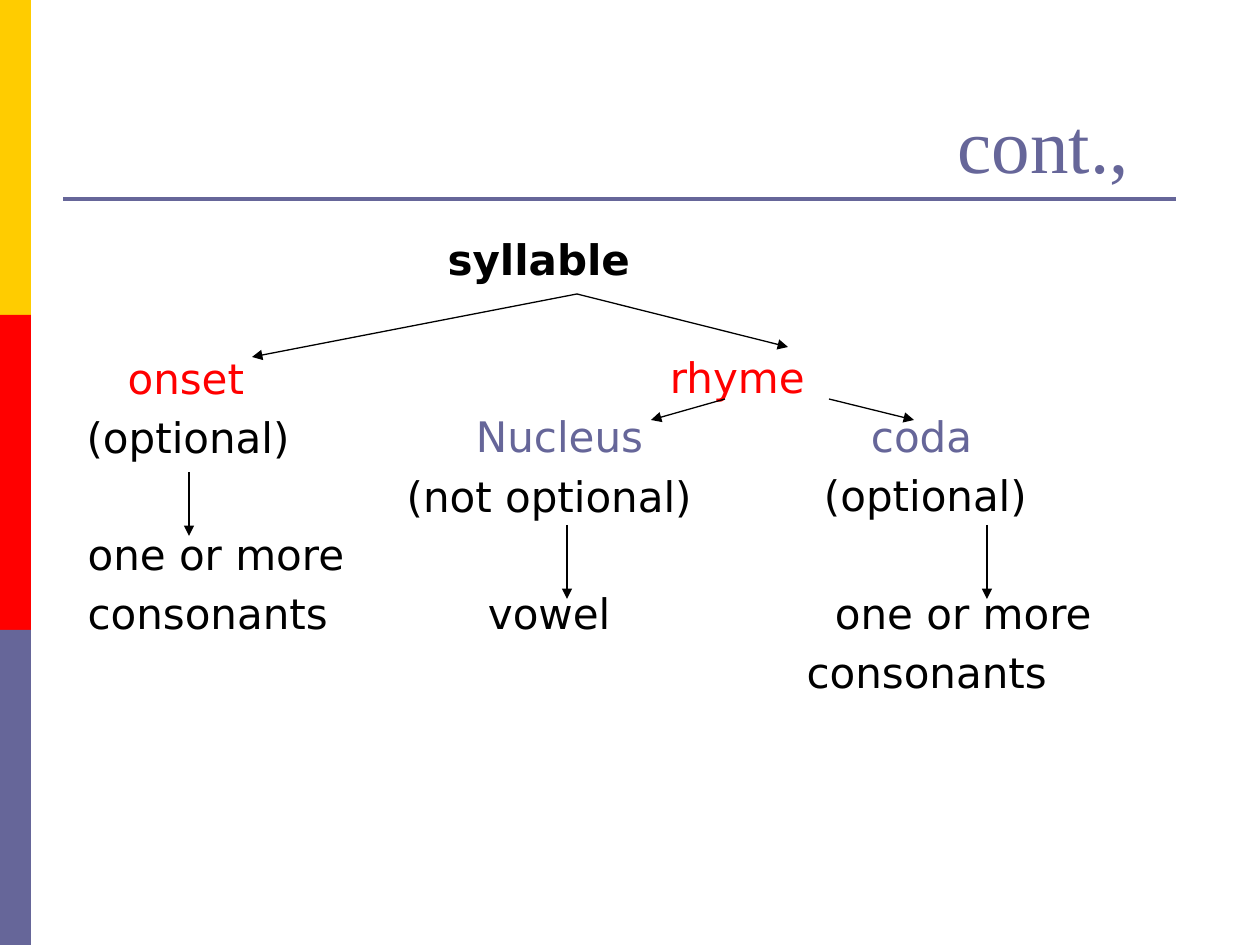
from pptx import Presentation
from pptx.dml.color import RGBColor
from pptx.enum.shapes import MSO_CONNECTOR, MSO_SHAPE
from pptx.enum.text import MSO_ANCHOR, MSO_AUTO_SIZE, PP_ALIGN
from pptx.oxml.ns import qn
from pptx.util import Pt
from lxml import etree

LINE = MSO_CONNECTOR.STRAIGHT
RECT = MSO_SHAPE.RECTANGLE
RIGHT = PP_ALIGN.RIGHT
BOTTOM, TOP = MSO_ANCHOR.BOTTOM, MSO_ANCHOR.TOP
FIXED = MSO_AUTO_SIZE.NONE

THEME = {
    "gold": RGBColor(0xFF, 0xCC, 0x00),
    "red": RGBColor(0xFF, 0x00, 0x00),
    "slate": RGBColor(0x66, 0x66, 0x99),
    "black": RGBColor(0x00, 0x00, 0x00),
    "head": ("Times New Roman", Pt(44)),
    "text": ("DejaVu Sans", Pt(24)),
}


def px(n):
    return round(n * 914400 / 126)


def draw_line(slide, ends, tone, width):
    line = slide.shapes.add_connector(LINE, *[px(n) for n in ends])
    line.line.color.rgb = THEME[tone]
    line.line.width = Pt(width)
    etree.SubElement(line._element.spPr, qn("a:effectLst"))
    return line


deck = Presentation()
deck.slide_width, deck.slide_height = px(1260), px(945)
slide = deck.slides.add_slide(deck.slide_layouts[1])

# Side bars and title rule
for i, tone in enumerate(("gold", "red", "slate")):
    bar = slide.shapes.add_shape(RECT, 0, px(315 * i), px(31), px(315))
    bar.shadow.inherit = False
    bar.fill.solid()
    bar.fill.fore_color.rgb = THEME[tone]
    bar.line.fill.background()
draw_line(slide, (63, 199, 1176, 199), "slate", 1.75)

# Title
title = slide.shapes.title
title.left, title.top, title.width, title.height = px(63), px(38), px(1134), px(157)
frame = title.text_frame
frame.text = "cont.,"
frame.auto_size = FIXED
frame.vertical_anchor = BOTTOM
frame.margin_right = px(68)
frame.margin_bottom = px(6)
para = frame.paragraphs[0]
para.alignment = RIGHT
font = para.runs[0].font
font.name, font.size = THEME["head"]
font.color.rgb = THEME["slate"]

# First label of each row: indent, text, colour
ROWS = [
    (372, "syllable", "black"),
    (52, "onset", "red"),
    (11, "(optional)", "black"),
    (331, "(not optional)", "black"),
    (12, "one or more", "black"),
    (12, "consonants", "black"),
    (731, "consonants", "black"),
]
body = slide.placeholders[1]
body.left, body.top, body.width, body.height = px(63), px(220), px(1134), px(624)
frame = body.text_frame
frame.auto_size = FIXED
frame.vertical_anchor = TOP
frame.margin_top = px(13)
labels = []
for i, (left, text, tone) in enumerate(ROWS):
    para = frame.paragraphs[0] if i == 0 else frame.add_paragraph()
    para.text = text
    # The branches under the root need a wider gap
    para.space_before = Pt((0, 39.5)[i] if i < 2 else 4.8)
    props = para._p.get_or_add_pPr()
    props.set("marL", str(px(left)))
    props.set("indent", "0")
    etree.SubElement(props, qn("a:buNone"))
    labels.append((para, tone))

# Labels further along a row: left, row, text, colour
SIDE = [
    (670, 0, "rhyme", "red"),
    (476, 1, "Nucleus", "slate"),
    (871, 1, "coda", "slate"),
    (824, 2, "(optional)", "black"),
    (488, 4, "vowel", "black"),
    (835, 4, "one or more", "black"),
]
for left, row, text, tone in SIDE:
    box = slide.shapes.add_textbox(px(left), px(352 + 59 * row), px(290), px(50))
    frame = box.text_frame
    frame.word_wrap = True
    frame.margin_left = frame.margin_right = 0
    frame.margin_top = frame.margin_bottom = 0
    frame.text = text
    labels.append((frame.paragraphs[0], tone))

for i, (para, tone) in enumerate(labels):
    font = para.runs[0].font
    font.name, font.size = THEME["text"]
    font.bold = i == 0
    font.color.rgb = THEME[tone]

# Branch arrows
ARROWS = [
    (577, 294, 252, 357),
    (577, 294, 788, 347),
    (189, 472, 189, 536),
    (725, 399, 651, 420),
    (829, 399, 914, 420),
    (567, 525, 567, 599),
    (987, 525, 987, 599),
]
for ends in ARROWS:
    arrow = draw_line(slide, ends, "black", 0.75)
    etree.SubElement(arrow.line._get_or_add_ln(), qn("a:tailEnd"), type="triangle")

deck.save("out.pptx")
